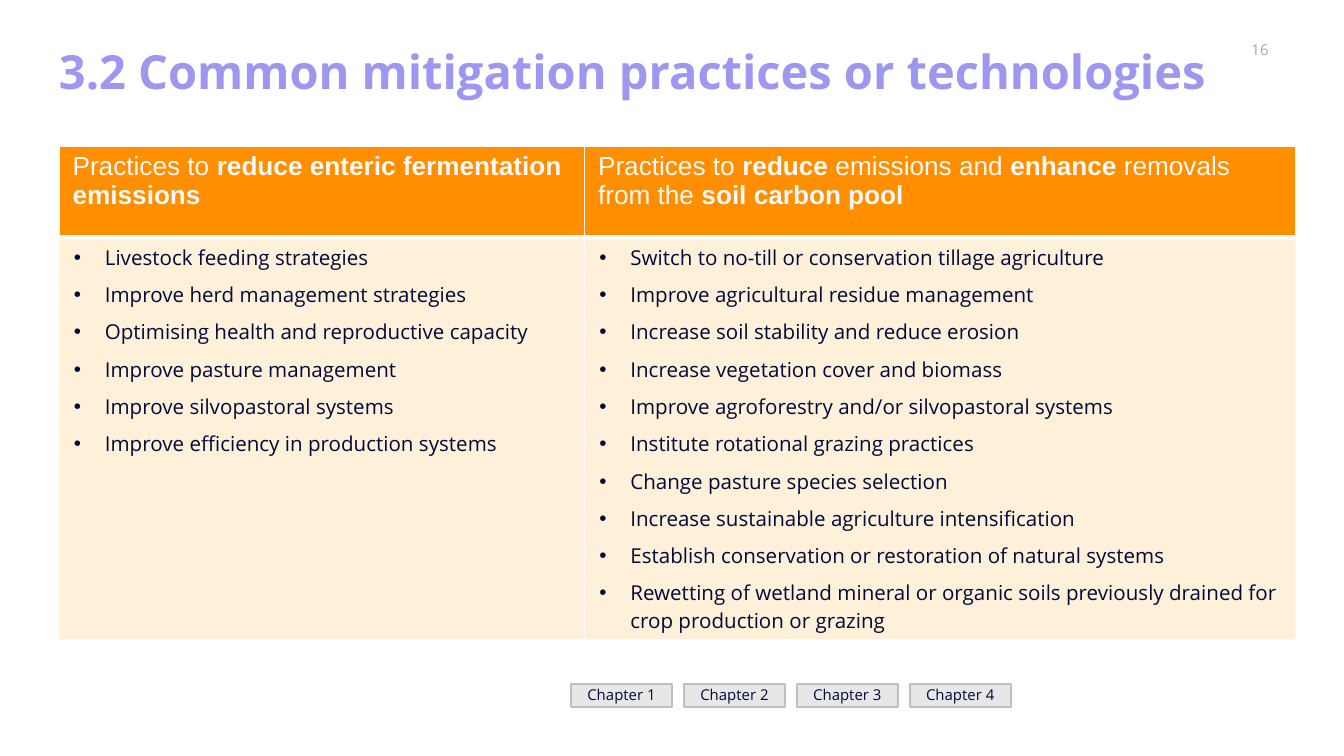
from lxml import etree
from pptx import Presentation
from pptx.dml.color import RGBColor
from pptx.enum.shapes import MSO_SHAPE
from pptx.enum.text import MSO_ANCHOR as ANCHOR, PP_ALIGN as ALIGN
from pptx.oxml.ns import qn
from pptx.util import Inches, Pt

COLORS = {
    "title": "9D97F0", "number": "A5A5A5", "ink": "000A3A", "light": "FAFAFA",
    "header": "FF8E00", "body": "FFF0DA", "button": "E7E7E7", "edge": "BFBFBF",
}
BODY_FONT = "Open Sans"

# Header runs are (text, bold) pairs
HEADERS = [
    [("Practices to ", False), ("reduce enteric fermentation emissions", True)],
    [("Practices to ", False), ("reduce", True), (" emissions and ", False),
     ("enhance", True), (" removals from the ", False), ("soil carbon pool", True)],
]
PRACTICES = [
    ["Livestock feeding strategies",
     "Improve herd management strategies",
     "Optimising health and reproductive capacity",
     "Improve pasture management",
     "Improve silvopastoral systems",
     "Improve efficiency in production systems"],
    ["Switch to no-till or conservation tillage agriculture",
     "Improve agricultural residue management",
     "Increase soil stability and reduce erosion",
     "Increase vegetation cover and biomass",
     "Improve agroforestry and/or silvopastoral systems",
     "Institute rotational grazing practices",
     "Change pasture species selection",
     "Increase sustainable agriculture intensification",
     "Establish conservation or restoration of natural systems",
     "Rewetting of wetland mineral or organic soils previously drained for "
     "crop production or grazing"],
]


def rgb(name):
    return RGBColor.from_string(COLORS[name])


def set_attrs(obj, values):
    for name, value in values.items():
        setattr(obj, name, value)


def add_run(p, text, size, color, bold=False, name=BODY_FONT):
    r = p.add_run()
    r.text = text
    set_attrs(r.font, {"size": Pt(size), "bold": bold, "name": name})
    r.font.color.rgb = rgb(color)


def format_frame(tf, x_inset=0.1, y_inset=0.05):
    set_attrs(tf, {
        "word_wrap": True, "vertical_anchor": ANCHOR.MIDDLE,
        "margin_left": Inches(x_inset), "margin_right": Inches(x_inset),
        "margin_top": Inches(y_inset), "margin_bottom": Inches(y_inset),
    })


def add_number(s):
    tf = s.shapes.add_textbox(Inches(8.98), Inches(0.26), Inches(0.79), Inches(0.22)).text_frame
    format_frame(tf, 0, 0)
    p = tf.paragraphs[0]
    p.alignment = ALIGN.CENTER
    add_run(p, "16", 8, "number")


def add_title(s, text):
    tf = s.shapes.add_textbox(Inches(0.34), Inches(0.24), Inches(9.32), Inches(0.63)).text_frame
    format_frame(tf)
    p = tf.paragraphs[0]
    p.line_spacing = 0.9
    add_run(p, text, 25.2, "title", bold=True)


def add_bullet(p):
    pPr = p._p.get_or_add_pPr()
    pPr.set("marL", str(Inches(0.24)))
    pPr.set("indent", str(Inches(-0.23)))
    color = etree.SubElement(pPr, qn("a:buClr"))
    etree.SubElement(color, qn("a:srgbClr"), val=COLORS["ink"])
    etree.SubElement(pPr, qn("a:buFont"), typeface="Arial")
    etree.SubElement(pPr, qn("a:buChar"), char="•")


def format_cell(cell, fill, top=1, bottom=1):
    set_attrs(cell, {
        "margin_left": Inches(0.1), "margin_right": Inches(0.1),
        "margin_top": Inches(0.04), "margin_bottom": Inches(0.04),
    })
    tcPr = cell._tc.get_or_add_tcPr()
    for side, width in (("L", 1), ("R", 1), ("T", top), ("B", bottom)):
        ln = etree.SubElement(tcPr, qn(f"a:ln{side}"), w=str(Pt(width)))
        solid = etree.SubElement(ln, qn("a:solidFill"))
        etree.SubElement(solid, qn("a:srgbClr"), val=COLORS["light"])
    cell.fill.solid()
    cell.fill.fore_color.rgb = rgb(fill)


def add_practices_table(s):
    widths, heights = (3.91, 5.29), (0.68, 2.99)
    table = s.shapes.add_table(2, 2, Inches(0.44), Inches(1.09),
                               Inches(sum(widths)), Inches(sum(heights))).table
    for column, width in zip(table.columns, widths):
        column.width = Inches(width)
    for row, height in zip(table.rows, heights):
        row.height = Inches(height)

    for col, (header, practices) in enumerate(zip(HEADERS, PRACTICES)):
        # Header cell
        cell = table.cell(0, col)
        format_cell(cell, "header", bottom=3)
        for text, bold in header:
            add_run(cell.text_frame.paragraphs[0], text, 14, "light", bold, "Arial")

        # Bulleted list of practices
        cell = table.cell(1, col)
        format_cell(cell, "body", top=3)
        tf = cell.text_frame
        for i, practice in enumerate(practices):
            p = tf.add_paragraph() if i else tf.paragraphs[0]
            add_bullet(p)
            if i:
                p.space_before = Pt(5)
            add_run(p, practice, 11, "ink")


def add_chapter_button(s, left, text):
    sp = s.shapes.add_shape(MSO_SHAPE.RECTANGLE, Inches(left), Inches(5.09),
                            Inches(0.75), Inches(0.17))
    sp.shadow.inherit = False
    sp.fill.solid()
    sp.fill.fore_color.rgb = rgb("button")
    sp.line.color.rgb = rgb("edge")
    sp.line.width = Pt(1)
    format_frame(sp.text_frame)
    p = sp.text_frame.paragraphs[0]
    set_attrs(p, {"alignment": ALIGN.CENTER, "line_spacing": 0.9, "space_after": Pt(12)})
    add_run(p, text, 8, "ink")


def main():
    prs = Presentation()
    # Widescreen, 16:9
    set_attrs(prs, {"slide_width": Inches(10), "slide_height": Inches(10 * 9 / 16)})
    s = prs.slides.add_slide(prs.slide_layouts[6])

    # Heading
    add_number(s)
    add_title(s, "3.2 Common mitigation practices or technologies")

    # Content
    add_practices_table(s)

    # Chapter navigation
    for i in range(4):
        add_chapter_button(s, 4.25 + 0.84 * i, f"Chapter {i + 1}")

    prs.save("out.pptx")


if __name__ == "__main__":
    main()
